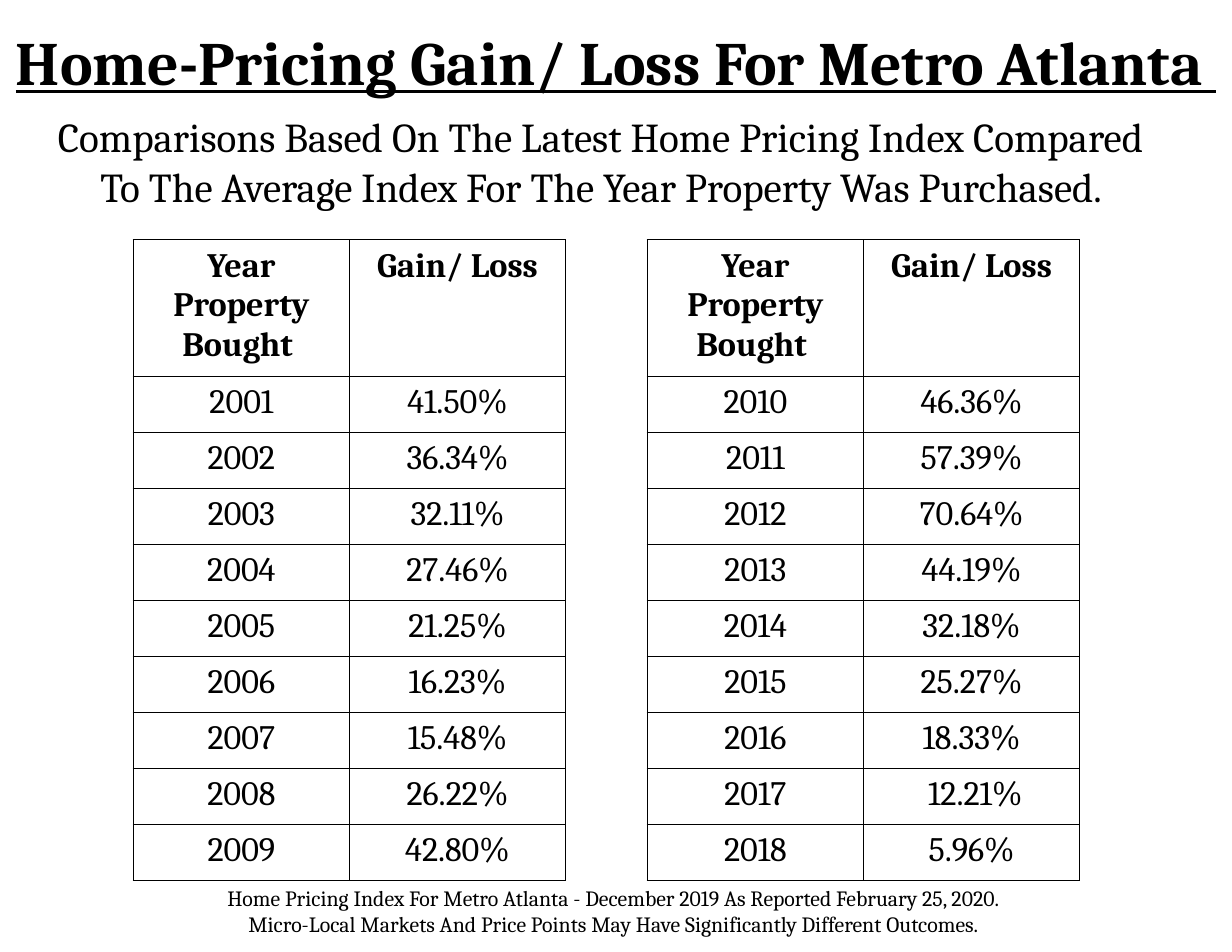
import pptx
import pptx.util
import pptx.dml.color
import pptx.enum.text
import pptx.oxml

Inches = pptx.util.Inches
Pt = pptx.util.Pt
Align = pptx.enum.text.PP_ALIGN
Anchor = pptx.enum.text.MSO_ANCHOR
Fit = pptx.enum.text.MSO_AUTO_SIZE
NS = "http://schemas.openxmlformats.org/drawingml/2006/main"


def color(code):
    return pptx.dml.color.RGBColor.from_string(code)


class Deck:
    face = "Cambria"
    ink = "000000"

    def __init__(self, wide, high):
        self.file = pptx.Presentation()
        self.file.slide_width = Inches(wide)
        self.file.slide_height = Inches(high)
        self.slide = self.file.slides.add_slide(self.file.slide_layouts[5])

    def label(self, frame, text, size, bold=False, under=False):
        frame.text = text
        frame.word_wrap = True
        for para in frame.paragraphs:
            para.alignment = Align.CENTER
            font = para.font
            font.name = self.face
            font.size = Pt(size)
            font.bold = bold
            font.underline = under
            font.color.rgb = color(self.ink)

    def title(self, text, left, top, wide, high, size):
        shape = self.slide.shapes.title
        shape.left, shape.top = Inches(left), Inches(top)
        shape.width, shape.height = Inches(wide), Inches(high)
        frame = shape.text_frame
        frame.auto_size = Fit.NONE
        frame.vertical_anchor = Anchor.MIDDLE
        self.label(frame, text, size, bold=True, under=True)

    def text(self, text, left, top, wide, high, size):
        box = self.slide.shapes.add_textbox(
            Inches(left), Inches(top), Inches(wide), Inches(high))
        self.label(box.text_frame, text, size)

    def border(self, cell):
        props = cell._tc.get_or_add_tcPr()
        for index, side in enumerate(("lnL", "lnR", "lnT", "lnB")):
            props.insert(index, pptx.oxml.parse_xml(
                f'<a:{side} xmlns:a="{NS}" w="{Pt(1)}"><a:solidFill>'
                f'<a:srgbClr val="{self.ink}"/></a:solidFill></a:{side}>'))

    def table(self, rows, left, top, col, head, row, size):
        count = len(rows[0])
        high = head + row * (len(rows) - 1)
        grid = self.slide.shapes.add_table(
            len(rows), count, Inches(left), Inches(top),
            Inches(col * count), Inches(high)).table
        grid.first_row = grid.horz_banding = False
        for part in grid.columns:
            part.width = Inches(col)
        for r, line in enumerate(rows):
            grid.rows[r].height = Inches(row if r else head)
            for c, text in enumerate(line):
                cell = grid.cell(r, c)
                cell.margin_left = cell.margin_right = Inches(0.11)
                cell.margin_top = cell.margin_bottom = Inches(0.06)
                cell.fill.background()
                self.border(cell)
                self.label(cell.text_frame, text, size, bold=r == 0)


def main():
    deck = Deck(11, 8.5)
    deck.title("Home-Pricing Gain/ Loss For Metro Atlanta ", 0, 0.31, 11, 0.46, 39.6)
    deck.text("Comparisons Based On The Latest Home Pricing Index Compared \n"
              "To The Average Index For The Year Property Was Purchased. ",
              0.18, 0.95, 10.45, 0.99, 26.4)

    head = ("Year Property Bought ", "Gain/ Loss")
    gains = (
        (1.19, 2001, ("41.50%", "36.34%", "32.11%", "27.46%", "21.25%",
                      "16.23%", "15.48%", "26.22%", "42.80%")),
        (5.78, 2010, ("46.36%", "57.39%", "70.64%", "44.19%", "32.18%",
                      "25.27%", "18.33%", " 12.21%", "5.96%")),
    )
    for left, start, values in gains:
        rows = [head] + [(str(year), gain) for year, gain in enumerate(values, start)]
        deck.table(rows, left, 2.14, 1.93, 1.21, 0.5, 22)

    deck.text("Home Pricing Index For Metro Atlanta - December 2019 "
              "As Reported February 25, 2020.\v"
              "Micro-Local Markets And Price Points May Have "
              "Significantly Different Outcomes.",
              -0.02, 7.85, 11, 0.57, 14)
    deck.file.save("out.pptx")


if __name__ == "__main__":
    main()
